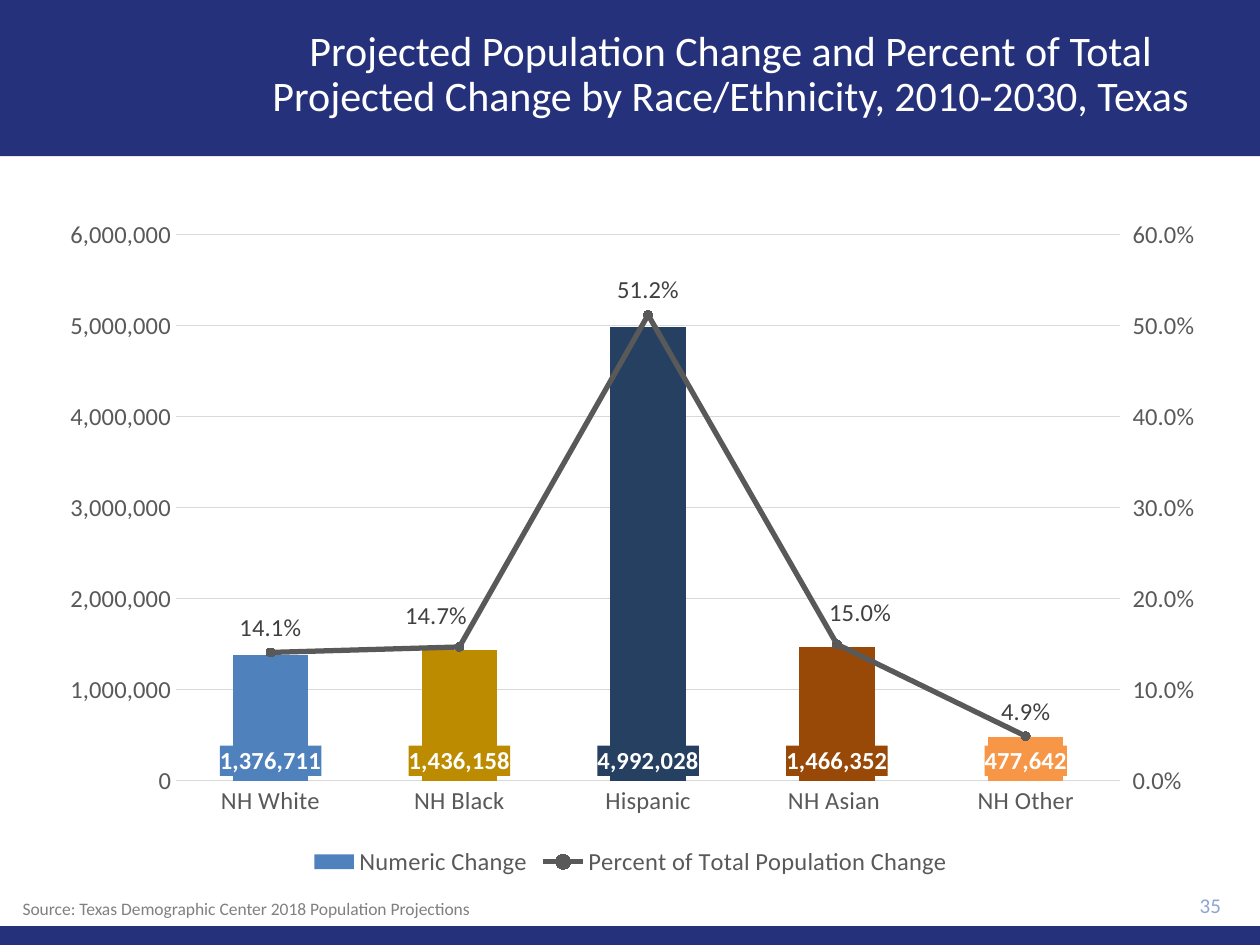
from copy import deepcopy

from pptx import Presentation
from pptx.chart.data import CategoryChartData
from pptx.dml.color import RGBColor
from pptx.enum.chart import (XL_CHART_TYPE, XL_LABEL_POSITION, XL_LEGEND_POSITION,
                             XL_MARKER_STYLE, XL_TICK_MARK)
from pptx.enum.shapes import MSO_SHAPE
from pptx.enum.text import MSO_ANCHOR, PP_ALIGN
from pptx.oxml import parse_xml
from pptx.oxml.ns import nsdecls, qn
from pptx.util import Pt

COLUMN = XL_CHART_TYPE.COLUMN_CLUSTERED
BASE, ABOVE = XL_LABEL_POSITION.INSIDE_BASE, XL_LABEL_POSITION.ABOVE
BOTTOM = XL_LEGEND_POSITION.BOTTOM
CIRCLE = XL_MARKER_STYLE.CIRCLE
NO_TICK = XL_TICK_MARK.NONE
RECT = MSO_SHAPE.RECTANGLE
TOP, MIDDLE = MSO_ANCHOR.TOP, MSO_ANCHOR.MIDDLE
LEFT, CENTER, RIGHT = PP_ALIGN.LEFT, PP_ALIGN.CENTER, PP_ALIGN.RIGHT

FONT = "Calibri"
NAVY, WHITE, GRAY, RULE, DARK = "25327B", "FFFFFF", "595959", "D9D9D9", "404040"
GROUPS = ["NH White", "NH Black", "Hispanic", "NH Asian ", "NH Other"]
COUNTS = [1376711, 1436158, 4992028, 1466352, 477642]
SHARES = [0.141, 0.147, 0.512, 0.15, 0.049]
HUES = ["4F81BD", "BC8B00", "254061", "984807", "F79646"]
SHIFTS = {1: (-0.02, -0.01), 3: (0.02, -0.01)}
NUMBER, PERCENT = "#,##0", "0.0%"


def color(code):
    return RGBColor.from_string(code)


def style(font, size=14, hue=GRAY, bold=False):
    font.name, font.size, font.bold = FONT, Pt(size), bold
    font.color.rgb = color(hue)


def write(shape, text, size=14, hue=GRAY, align=LEFT, anchor=MIDDLE, space=1.0, hang=0):
    frame = shape.text_frame
    frame.word_wrap = True
    frame.vertical_anchor = anchor
    para = frame.paragraphs[0]
    para.alignment, para.line_spacing = align, space
    if hang:
        props = para._p.get_or_add_pPr()
        props.set("marL", str(Pt(hang)))
        props.set("indent", str(Pt(-hang)))
    run = para.add_run()
    run.text = text
    style(run.font, size, hue)


def place(shape, box):
    shape.left, shape.top, shape.width, shape.height = [Pt(n) for n in box]


def add_band(slide, box):
    band = slide.shapes.add_shape(RECT, *[Pt(n) for n in box])
    band.shadow.inherit = False
    band.fill.solid()
    band.fill.fore_color.rgb = color(NAVY)
    band.line.fill.background()
    slide.shapes.title.element.addprevious(band.element)


def add_head(slide, box):
    add_band(slide, (0, 0, 720, 89.3))
    place(slide.shapes.title, box)
    write(slide.shapes.title, "Projected Population Change and Percent of Total "
          "Projected Change by Race/Ethnicity, 2010-2030, Texas",
          size=24, hue=WHITE, align=CENTER, space=0.9)


def add_note(slide, box, text, **form):
    note = slide.shapes.add_textbox(*[Pt(n) for n in box])
    write(note, text, **form)


def layout(x, y, extra=""):
    return parse_xml(
        f'<c:layout {nsdecls("c")}><c:manualLayout>{extra}<c:x val="{x}"/><c:y val="{y}"/>'
        '</c:manualLayout></c:layout>')


def drop(node, tag):
    for old in node.findall(qn("c:" + tag)):
        node.remove(old)


def set_val(node, **vals):
    for tag, val in vals.items():
        node.find(qn("c:" + tag)).set("val", val)


def add_right(chart):
    area = chart.element.xpath("c:chart/c:plotArea")[0]
    bars = area.find(qn("c:barChart"))
    ser = bars.findall(qn("c:ser"))[1]
    drop(ser, "invertIfNegative")
    line = parse_xml(
        f'<c:lineChart {nsdecls("c")}><c:grouping val="standard"/><c:varyColors val="0"/>'
        '<c:marker val="1"/><c:axId val="501"/><c:axId val="502"/></c:lineChart>')
    line.insert(2, ser)
    bars.addnext(line)
    cat = deepcopy(area.find(qn("c:catAx")))
    set_val(cat, axId="501", crossAx="502", delete="1")
    val = deepcopy(area.find(qn("c:valAx")))
    set_val(val, axId="502", crossAx="501", axPos="r", crosses="max",
            majorTickMark="out", majorUnit="0.1")
    set_val(val.find(qn("c:scaling")), max="0.6")
    val.find(qn("c:numFmt")).set("formatCode", PERCENT)
    drop(val, "majorGridlines")
    area.findall(qn("c:valAx"))[-1].addnext(val)
    val.addnext(cat)


def set_axes(chart):
    cat, val = chart.category_axis, chart.value_axis
    for axis in (cat, val):
        axis.major_tick_mark = axis.minor_tick_mark = NO_TICK
        style(axis.tick_labels.font)
    cat.format.line.color.rgb = color(RULE)
    cat.format.line.width = Pt(0.75)
    val.format.line.fill.background()
    val.minimum_scale, val.maximum_scale, val.major_unit = 0, 6000000, 1000000
    grid = val.major_gridlines.format.line
    grid.color.rgb, grid.width = color(RULE), Pt(0.75)
    val.tick_labels.number_format = NUMBER
    val.tick_labels.number_format_is_linked = False


def set_labels(series, code, spot, **form):
    labels = series.data_labels
    labels.show_value = True
    labels.number_format, labels.number_format_is_linked = code, False
    labels.position = spot
    style(labels.font, **form)


def point_label(series, index, code, spot, **form):
    label = series.points[index].data_label
    style(label.font, **form)
    label.position = spot
    node = series._element.xpath(f"c:dLbls/c:dLbl[c:idx/@val='{index}']")[0]
    drop(node, "spPr")
    node.find(qn("c:txPr")).addprevious(parse_xml(
        f'<c:numFmt {nsdecls("c")} formatCode="{code}" sourceLinked="0"/>'))
    return node


def style_bars(series):
    series.format.fill.solid()
    series.format.fill.fore_color.rgb = color(HUES[0])
    set_labels(series, NUMBER, BASE, hue=WHITE, bold=True)
    for index, hue in enumerate(HUES):
        fill = series.points[index].format.fill
        fill.solid()
        fill.fore_color.rgb = color(hue)
        node = point_label(series, index, NUMBER, BASE, hue=WHITE, bold=True)
        node.find(qn("c:txPr")).addprevious(parse_xml(
            f'<c:spPr {nsdecls("c", "a")}><a:solidFill><a:srgbClr val="{hue}"/>'
            '</a:solidFill></c:spPr>'))


def style_line(series):
    series.smooth = False
    series.format.line.color.rgb = color(GRAY)
    series.format.line.width = Pt(3)
    mark = series.marker
    mark.style, mark.size = CIRCLE, 5
    mark.format.fill.solid()
    mark.format.fill.fore_color.rgb = color(GRAY)
    mark.format.line.color.rgb = color(GRAY)
    set_labels(series, PERCENT, ABOVE, hue=DARK)
    for index, shift in SHIFTS.items():
        node = point_label(series, index, PERCENT, ABOVE, hue=DARK)
        node.find(qn("c:idx")).addnext(layout(*shift))


def add_graph(slide, box):
    data = CategoryChartData()
    data.categories = GROUPS
    data.add_series("Numeric Change", COUNTS, NUMBER)
    data.add_series("Percent of Total Population Change", SHARES, PERCENT)
    chart = slide.shapes.add_chart(COLUMN, *[Pt(n) for n in box], data).chart
    chart.has_title = False
    style(chart.font, hue="000000")
    chart.has_legend = True
    chart.legend.position, chart.legend.include_in_layout = BOTTOM, False
    style(chart.legend.font)
    set_axes(chart)
    add_right(chart)
    bars, line = chart.plots
    bars.gap_width, bars.vary_by_categories = 150, False
    style_bars(bars.series[0])
    style_line(line.series[0])
    area = chart.element.xpath("c:chart/c:plotArea")[0]
    drop(area, "layout")
    frame = layout(0.11, 0.04, '<c:layoutTarget val="inner"/><c:xMode val="edge"/>'
                   '<c:yMode val="edge"/>')
    for tag in "wh":
        frame[0].append(parse_xml(f'<c:{tag} {nsdecls("c")} val="0.81"/>'))
    area.insert(0, frame)


def main():
    deck = Presentation()
    deck.slide_width, deck.slide_height = Pt(720), Pt(540)
    slide = deck.slides.add_slide(deck.slide_layouts[5])
    add_head(slide, (122.4, 7.2, 590.4, 72))
    add_band(slide, (0, 529.2, 720, 10.8))
    add_note(slide, (640.8, 504.7, 64, 24.5), "35", size=12, hue="8FA5D1", align=RIGHT)
    add_graph(slide, (27.4, 118.8, 666, 385.2))
    add_note(slide, (5.8, 509.8, 689.8, 19.4),
             "Source: Texas Demographic Center 2018 Population Projections",
             size=10, hue="808080", anchor=TOP, hang=62.6)
    deck.save("out.pptx")


if __name__ == "__main__":
    main()
